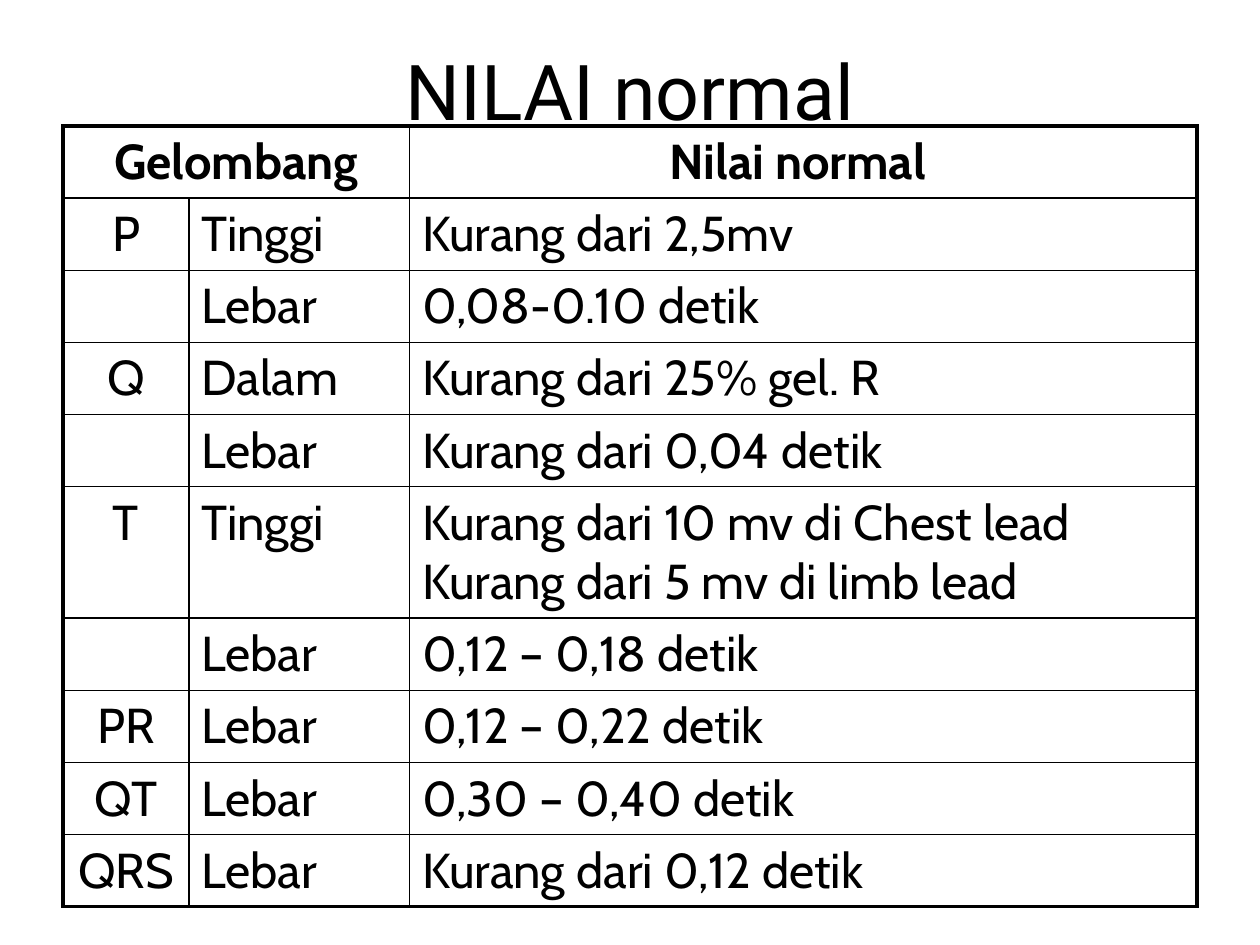
from lxml.etree import SubElement, Element
from pptx import Presentation
from pptx.dml.color import RGBColor
from pptx.enum.text import MSO_ANCHOR as Anchor, PP_ALIGN as Align
from pptx.oxml.ns import qn
from pptx.util import Pt

PX = 9144  # EMU per px, 100 px to the inch
BLACK = RGBColor(0x00, 0x00, 0x00)
THIN, THICK = 1, 2.25

TITLE_FONT = {"name": "Roboto", "size": Pt(44), "bold": False}
CELL_FONT = {"name": "Cabin", "size": Pt(28), "bold": False}
HEADER_FONT = {**CELL_FONT, "bold": True}

COLUMN_WIDTHS = [100, 175, 625]
ROW_HEIGHT, TALL_ROW_HEIGHT = 55, 100
WAVES = [
    ("Gelombang", "", "Nilai normal "),
    ("P", "Tinggi", "Kurang dari 2,5mv"),
    ("", "Lebar", "0,08-0.10 detik"),
    ("Q", "Dalam", "Kurang dari 25% gel. R"),
    ("", "Lebar", "Kurang dari 0,04 detik"),
    ("T", "Tinggi", "Kurang dari 10 mv di Chest lead Kurang dari 5 mv di limb lead"),
    ("", "Lebar", "0,12 – 0,18 detik"),
    ("PR", "Lebar", "0,12 – 0,22 detik"),
    ("QT", "Lebar", "0,30 – 0,40 detik"),
    ("QRS", "Lebar", "Kurang dari 0,12 detik"),
]
TALL_ROW = 5


class SlideBuilder:
    def __init__(self, deck):
        self.slide = deck.slides.add_slide(deck.slide_layouts[5])

    def add_text(self, frame, text, style, align):
        paragraph = frame.paragraphs[0]
        paragraph.alignment = align
        run = paragraph.add_run()
        run.text = text
        for attribute, value in style.items():
            setattr(run.font, attribute, value)
        run.font.color.rgb = BLACK

    def title(self, text, left, top, width, height):
        heading = self.slide.shapes.title
        box = {"left": left, "top": top, "width": width, "height": height}
        for attribute, value in box.items():
            setattr(heading, attribute, value * PX)
        heading.text_frame.vertical_anchor = Anchor.MIDDLE
        self.add_text(heading.text_frame, text, TITLE_FONT, Align.CENTER)

    def borders(self, cell, widths):
        properties = cell._tc.get_or_add_tcPr()
        for position, (side, width) in enumerate(widths.items()):
            line = Element(qn(f"a:ln{side}"), w=str(Pt(width)))
            fill = SubElement(line, qn("a:solidFill"))
            SubElement(fill, qn("a:srgbClr"), val=str(BLACK))
            properties.insert(position, line)

    def table(self, rows, widths, heights, left, top):
        frame = self.slide.shapes.add_table(
            len(rows), len(widths), left * PX, top * PX,
            sum(widths) * PX, sum(heights) * PX)
        grid = frame.table
        grid.first_row = grid.horz_banding = False
        for column, width in zip(grid.columns, widths):
            column.width = width * PX
        for row, height in zip(grid.rows, heights):
            row.height = height * PX

        # Thick outer frame, thin inner rules
        last_row, last_column = len(rows) - 1, len(widths) - 1
        for r, texts in enumerate(rows):
            for c, text in enumerate(texts):
                cell = grid.cell(r, c)
                cell.fill.background()
                self.borders(cell, {
                    "L": THICK if c == 0 else THIN,
                    "R": THICK if c == last_column else THIN,
                    "T": THICK if r == 0 else THIN,
                    "B": THICK if r == last_row else THIN,
                })
                if text:
                    self.add_text(cell.text_frame, text,
                                  HEADER_FONT if r == 0 else CELL_FONT,
                                  Align.CENTER if r == 0 or c == 0 else Align.LEFT)
        return grid


def main():
    deck = Presentation()
    deck.slide_width, deck.slide_height = 1000 * PX, 750 * PX
    builder = SlideBuilder(deck)

    # Heading
    builder.title("NILAI normal", 50, 17, 900, 108)

    # Normal values of each ECG wave
    heights = [TALL_ROW_HEIGHT if r == TALL_ROW else ROW_HEIGHT
               for r in range(len(WAVES))]
    values = builder.table(WAVES, COLUMN_WIDTHS, heights, 50, 100)
    values.cell(0, 0).merge(values.cell(0, 1))

    deck.save("out.pptx")


if __name__ == "__main__":
    main()
